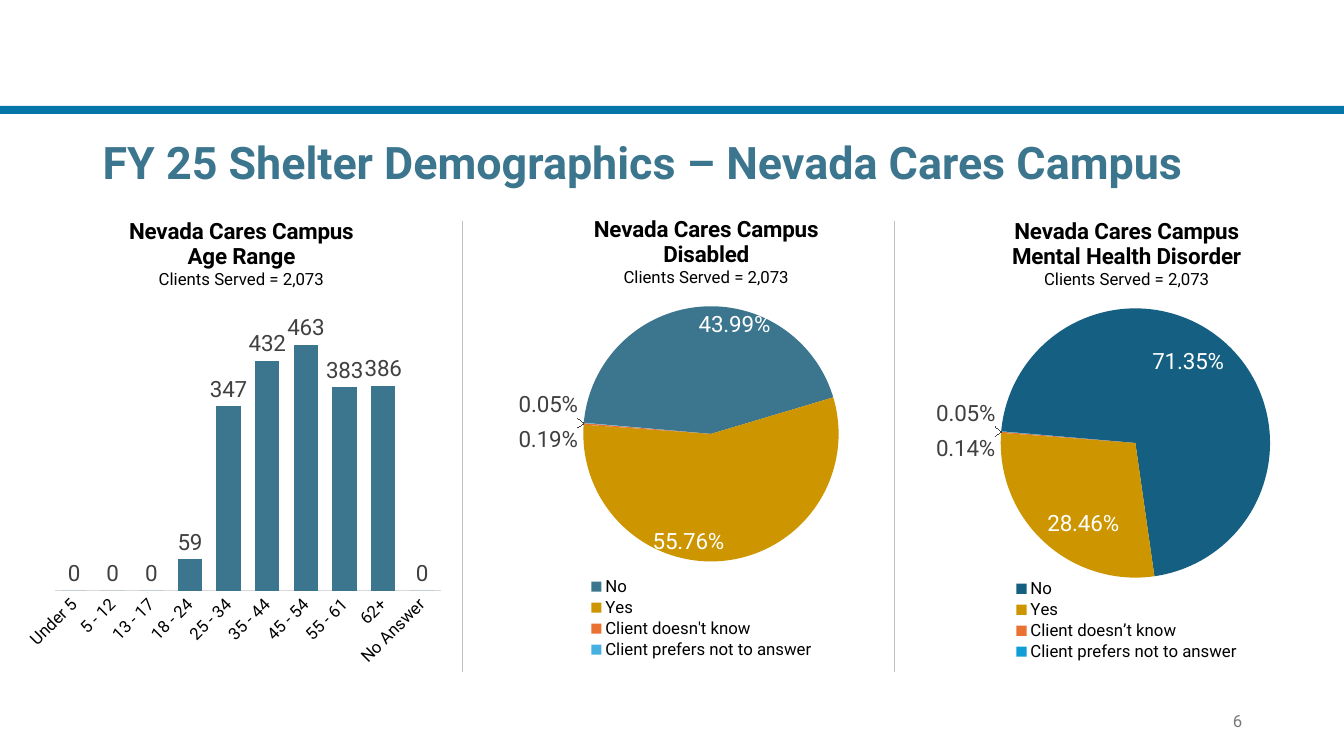
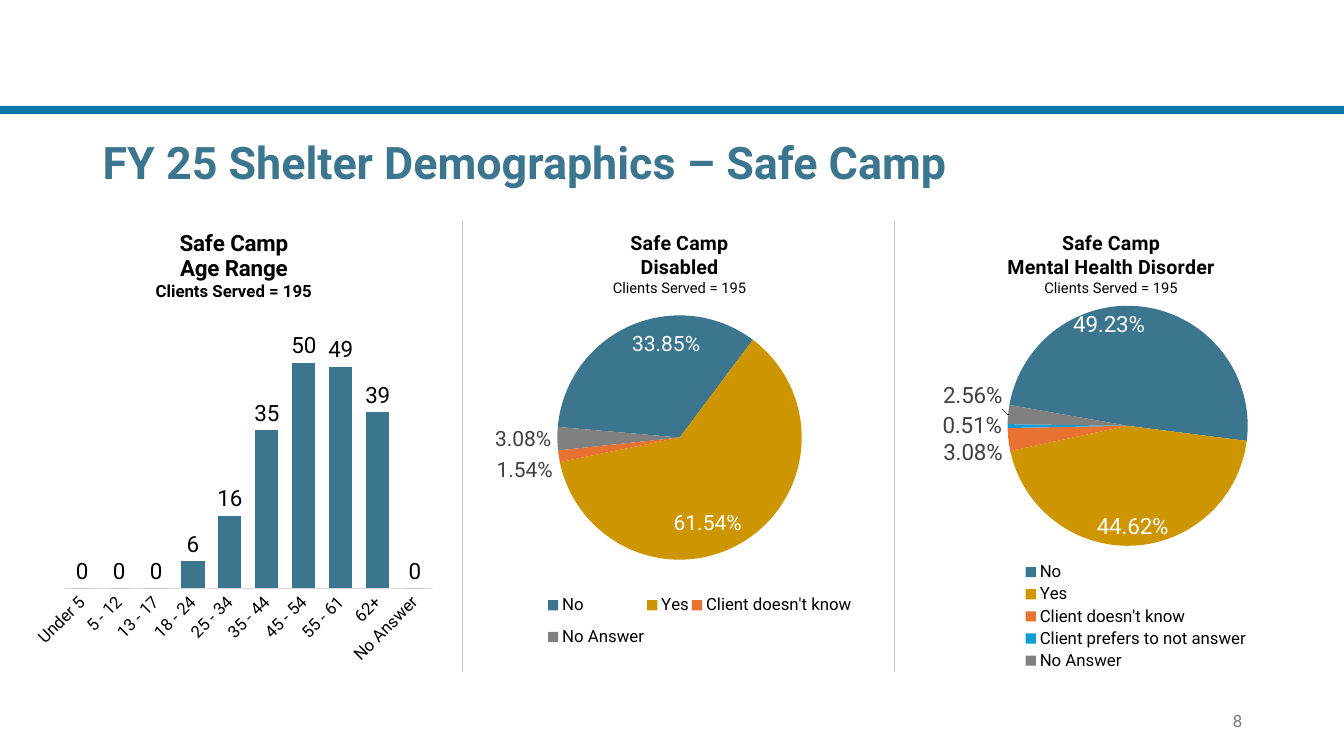
from lxml import etree
from pptx import Presentation
from pptx.chart.data import CategoryChartData
from pptx.dml.color import RGBColor
from pptx.enum import chart as ch, shapes, text
from pptx.oxml import parse_xml
from pptx.oxml.ns import nsdecls, qn
from pptx.util import Inches, Pt

FONT = "Roboto"
TEAL = RGBColor(0x3C, 0x75, 0x8E)
NAVY = RGBColor(0x15, 0x60, 0x82)
GOLD = RGBColor(0xCD, 0x96, 0x00)
ORANGE = RGBColor(0xE9, 0x71, 0x32)
SKY = RGBColor(0x46, 0xB1, 0xE1)
CYAN = RGBColor(0x0F, 0x9E, 0xD5)
GRAY = RGBColor(0x80, 0x80, 0x80)
BAND = RGBColor(0x04, 0x76, 0xA8)
BLACK = RGBColor(0, 0, 0)
WHITE = RGBColor(0xFF, 0xFF, 0xFF)
DARK = RGBColor(0x40, 0x40, 0x40)
RULE = RGBColor(0xBF, 0xBF, 0xBF)
AXIS = RGBColor(0xD9, 0xD9, 0xD9)
FOOTER = RGBColor(0x79, 0x79, 0x79)

AGES = ["Under 5", "5 - 12", "13 - 17", "18 - 24", "25 - 34", "35 - 44",
        "45 - 54", "55 - 61", "62+", "No Answer"]


def style(font, size, color, bold=False):
    font.name, font.size, font.bold = FONT, Pt(size), bold
    font.color.rgb = color


def place(parent, index, box, inner=False):
    """Give a chart part a manual layout, in fractions of the chart."""
    for old in parent.findall(qn("c:layout")):
        parent.remove(old)
    target = '<c:layoutTarget val="inner"/>' if inner else ""
    modes = '<c:xMode val="edge"/><c:yMode val="edge"/>'
    sizes = "".join(f'<c:{k} val="{v}"/>' for k, v in zip("xywh", box))
    parent.insert(index, parse_xml(
        f'<c:layout {nsdecls("c")}><c:manualLayout>{target}{modes}{sizes}'
        "</c:manualLayout></c:layout>"))


class Deck:
    def __init__(self):
        self.prs = Presentation()
        self.prs.slide_width, self.prs.slide_height = Inches(13.33), Inches(7.5)
        self.s = None

    def slide(self, title, number):
        self.s = self.prs.slides.add_slide(self.prs.slide_layouts[6])
        band = self.s.shapes.add_shape(shapes.MSO_SHAPE.RECTANGLE, 0, Inches(1.05),
                                       self.prs.slide_width, Inches(0.08))
        band.shadow.inherit = False
        band.fill.solid()
        band.fill.fore_color.rgb = BAND
        band.line.fill.background()
        self.text(title, (0.92, 1.23, 12, 0.75), 32, TEAL, bold=True)
        self.text(str(number), (9.42, 6.95, 3, 0.4), 12, FOOTER,
                  align=text.PP_ALIGN.RIGHT)
        for x in (4.59, 8.87):
            self.divider(x)

    def text(self, words, box, size, color, bold=False, align=text.PP_ALIGN.LEFT):
        tf = self.s.shapes.add_textbox(*map(Inches, box)).text_frame
        tf.word_wrap = True
        tf.vertical_anchor = text.MSO_ANCHOR.MIDDLE
        p = tf.paragraphs[0]
        p.text, p.alignment = words, align
        style(p.font, size, color, bold)

    def divider(self, x):
        line = self.s.shapes.add_connector(shapes.MSO_CONNECTOR.STRAIGHT, Inches(x),
                                           Inches(2.19), Inches(x), Inches(6.67))
        line.line.color.rgb = RULE
        line.line.width = Pt(1)
        etree.SubElement(line._element.spPr, qn("a:effectLst"))

    def chart(self, kind, box, title, cats, vals, fmt, plot,
              size=16, note_size=12, note_bold=False):
        """Add a one-series chart whose last title line is a smaller note."""
        data = CategoryChartData(number_format=fmt)
        data.categories = cats
        data.add_series("Series 1", vals)
        chart = self.s.shapes.add_chart(kind, *map(Inches, box), data).chart
        style(chart.font, 12, BLACK)
        chart.has_legend = False
        tf = chart.chart_title.text_frame
        for i, words in enumerate(title):
            p = tf.paragraphs[0] if i == 0 else tf.add_paragraph()
            p.text = words
            if i < len(title) - 1:
                style(p.font, size, BLACK, True)
            else:
                style(p.font, note_size, BLACK, note_bold)
        place(chart._chartSpace.chart.plotArea, 0, plot, inner=True)
        return chart

    def labels(self, plot, fmt, size, color, position):
        plot.has_data_labels = True
        labels = plot.data_labels
        labels.show_value = True
        labels.number_format, labels.number_format_is_linked = fmt, False
        labels.position = position
        style(labels.font, size, color)

    def columns(self, box, title, vals, top, plot, label_color, **title_style):
        chart = self.chart(ch.XL_CHART_TYPE.COLUMN_CLUSTERED, box, title, AGES, vals,
                           "#,##0", plot, **title_style)
        bars = chart.plots[0]
        bars.gap_width, bars.overlap, bars.vary_by_categories = 59, -27, False
        bars.series[0].format.fill.solid()
        bars.series[0].format.fill.fore_color.rgb = TEAL
        self.labels(bars, "#,##0", 16, label_color, ch.XL_LABEL_POSITION.OUTSIDE_END)
        values, ages = chart.value_axis, chart.category_axis
        values.minimum_scale, values.maximum_scale = 0, top
        values.has_major_gridlines = values.visible = False
        ages.major_tick_mark = ch.XL_TICK_MARK.NONE
        ages.format.line.color.rgb = AXIS
        ages.format.line.width = Pt(0.75)
        style(ages.tick_labels.font, 12, BLACK)
        ages._element.find(qn("c:txPr")).find(qn("a:bodyPr")).set("rot", "-2700000")

    def pie(self, box, title, slices, start, plot, legend, label_size=16, **title_style):
        cats, vals, colors = zip(*slices)
        chart = self.chart(ch.XL_CHART_TYPE.PIE, box, title, cats, vals, "0.00%",
                           plot, **title_style)
        pie = chart.plots[0]
        pie.vary_by_categories = True
        self.labels(pie, "0.00%", label_size, DARK, ch.XL_LABEL_POSITION.BEST_FIT)
        for i, color in enumerate(colors):
            fill = pie.series[0].points[i].format.fill
            fill.solid()
            fill.fore_color.rgb = color
        # The labels of the two large slices sit inside, in white
        series_labels = pie.series[0].data_labels
        series_labels.show_value = True
        series_labels.number_format = "0.00%"
        series_labels.number_format_is_linked = False
        series_labels.position = ch.XL_LABEL_POSITION.BEST_FIT
        style(series_labels.font, label_size, DARK)
        for i in range(2):
            label = pie.series[0].points[i].data_label
            style(label.font, label_size, WHITE)
            label.position = ch.XL_LABEL_POSITION.INSIDE_END
        # First slice angle
        pie_xml = pie._element
        for old in pie_xml.findall(qn("c:firstSliceAng")):
            pie_xml.remove(old)
        etree.SubElement(pie_xml, qn("c:firstSliceAng")).set("val", str(start))
        # Legend
        chart.has_legend = True
        chart.legend.position = ch.XL_LEGEND_POSITION.BOTTOM
        chart.legend.include_in_layout = False
        style(chart.legend.font, 12, BLACK)
        place(chart.legend._element, 1, legend)


def main():
    deck = Deck()

    # Nevada Cares Campus
    name, served = "Nevada Cares Campus", "Clients Served = 2,073"
    deck.slide("FY 25 Shelter Demographics – Nevada Cares Campus", 6)
    deck.columns((0.24, 1.98, 4.31, 4.79), (name, "Age Range", served),
                 (0, 0, 0, 59, 347, 432, 463, 383, 386, 0), 500,
                 (0.07, 0.26, 0.89, 0.55), DARK)
    deck.pie((4.65, 1.96, 4.71, 4.69), (name, "Disabled", served),
             [("No", 0.4399, TEAL), ("Yes", 0.5576, GOLD),
              ("Client doesn't know", 0.0019, ORANGE),
              ("Client prefers not to answer", 0.0005, SKY)],
             275, (0.24, 0.23, 0.54, 0.54), (0.24, 0.8, 0.5, 0.18))
    deck.pie((9.02, 1.98, 4.31, 4.69), (name, "Mental Health Disorder", served),
             [("No", 0.7135, NAVY), ("Yes", 0.2846, GOLD),
              ("Client doesn’t know", 0.0014, ORANGE),
              ("Client prefers not to answer", 0.0005, CYAN)],
             275, (0.21, 0.23, 0.62, 0.57), (0.23, 0.8, 0.54, 0.18))

    # Safe Camp
    name, served = "Safe Camp", "Clients Served = 195"
    small = {"size": 14, "note_size": 10.5}
    deck.slide("FY 25 Shelter Demographics – Safe Camp", 8)
    deck.columns((0.26, 2.1, 4.12, 4.56), (name, "Age Range", served),
                 (0, 0, 0, 6, 16, 35, 50, 49, 39, 0), 60,
                 (0.09, 0.23, 0.89, 0.59), BLACK, note_bold=True)
    deck.pie((4.72, 2.1, 4.04, 4.67), (name, "Disabled", served),
             [("No", 0.3385, TEAL), ("Yes", 0.6154, GOLD),
              ("Client doesn't know", 0.0154, ORANGE), ("No Answer", 0.0308, GRAY)],
             275, (0.2, 0.22, 0.6, 0.52), (0.17, 0.79, 0.76, 0.16),
             label_size=15, **small)
    deck.pie((8.96, 2.1, 4.12, 4.67), (name, "Mental Health Disorder", served),
             [("No", 0.4923, TEAL), ("Yes", 0.4462, GOLD),
              ("Client doesn't know", 0.0308, ORANGE),
              ("Client prefers to not answer", 0.0051, CYAN),
              ("No Answer", 0.0256, GRAY)],
             280, (0.25, 0.2, 0.58, 0.51), (0.29, 0.74, 0.54, 0.24), **small)

    deck.prs.save("out.pptx")


if __name__ == "__main__":
    main()
